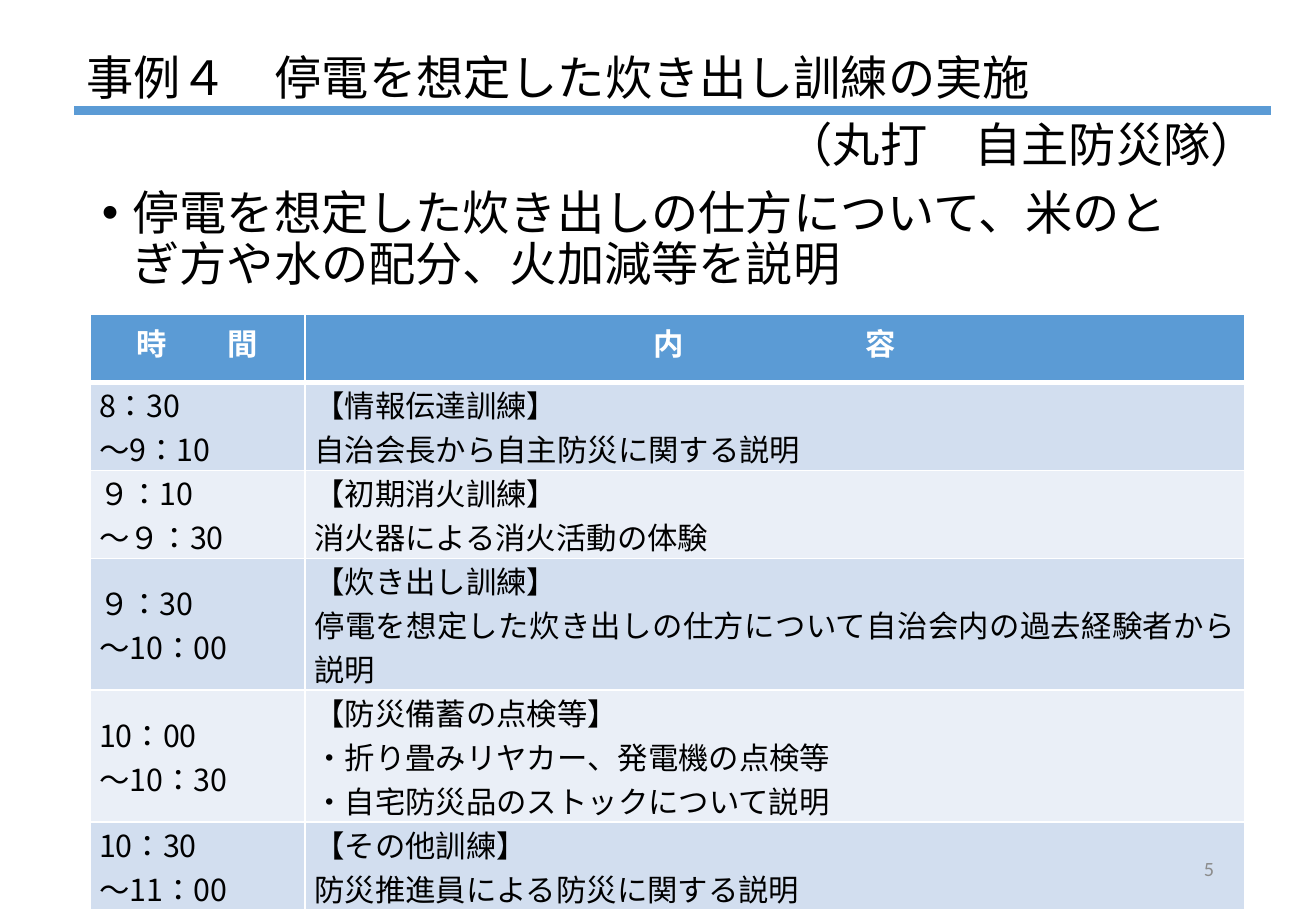
"""Build the slide on the cooking drill held under a simulated power cut."""
from lxml import etree
from pptx import Presentation
from pptx import util as u
from pptx.dml.color import RGBColor
from pptx.enum import shapes, text
from pptx.oxml import ns

COLOURS = {
    "accent": "5B9BD5",
    "band_dark": "D2DEEF",
    "band_light": "EAEFF7",
    "white": "FFFFFF",
    "black": "000000",
    "grey": "8C8C8C",
}
JAPANESE = "Noto Sans CJK JP"
ALIGN = text.PP_ALIGN
ANCHOR = text.MSO_ANCHOR

SCHEDULE = [
    (2, ["8：30", "～9：10"],
     ["【情報伝達訓練】", "自治会長から自主防災に関する説明"]),
    (2, ["９：10", "～９：30"],
     ["【初期消火訓練】", "消火器による消火活動の体験"]),
    (3, ["９：30", "～10：00"],
     ["【炊き出し訓練】",
      "停電を想定した炊き出しの仕方について自治会内の過去経験者から説明"]),
    (3, ["10：00", "～10：30"],
     ["【防災備蓄の点検等】", "・折り畳みリヤカー、発電機の点検等",
      "・自宅防災品のストックについて説明"]),
    (2, ["10：30", "～11：00"],
     ["【その他訓練】", "防災推進員による防災に関する説明"]),
]


def colour(name):
    """Return the named colour."""
    return RGBColor.from_string(COLOURS[name])


def write(frame, lines, size=28, font=JAPANESE, ink="black", bold=False,
          align=ALIGN.LEFT, spacing=None, before=0):
    """Write one paragraph per line and return the paragraphs."""
    for number, line in enumerate(lines):
        para = frame.add_paragraph() if number else frame.paragraphs[0]
        para.alignment = align
        para.space_before = u.Pt(before)
        if spacing:
            para.line_spacing = spacing
        span = para.add_run()
        span.text = line
        span.font.size = u.Pt(size)
        span.font.bold = bold
        span.font.color.rgb = colour(ink)
        span.font.name = font
        etree.SubElement(span.font._element, ns.qn("a:ea"), typeface=font)
    return frame.paragraphs


def add_text(page, box, line, anchor=ANCHOR.MIDDLE, **style):
    """Place a wrapped text box and return its paragraph."""
    frame = page.shapes.add_textbox(*map(u.Cm, box)).text_frame
    frame.word_wrap = True
    frame.vertical_anchor = anchor
    return write(frame, [line], **style)[0]


def add_heading(page, box):
    """Place the title, its rule and the group name beneath it."""
    left, top, width, height = box
    add_text(page, (left, top, width, height),
             "事例４　停電を想定した炊き出し訓練の実施", spacing=0.9)
    rule_top = u.Cm(top + 1.34)
    rule = page.shapes.add_connector(
        shapes.MSO_CONNECTOR.STRAIGHT,
        u.Cm(left), rule_top, u.Cm(left + 25.02), rule_top)
    rule.line.color.rgb = colour("accent")
    rule.line.width = u.Pt(5.75)
    etree.SubElement(rule._element.spPr, ns.qn("a:effectLst"))
    add_text(page, (left + 1.27, top + 1.39, width, height),
             "（丸打　自主防災隊）", align=ALIGN.RIGHT, spacing=0.9)


def add_summary(page, box):
    """Place the bulleted summary."""
    para = add_text(page, box,
                    "停電を想定した炊き出しの仕方について、米のとぎ方や水の配分、火加減等を説明",
                    anchor=ANCHOR.TOP, spacing=0.9, before=10)
    properties = para._p.get_or_add_pPr()
    indent = u.Cm(0.64)
    properties.set("marL", str(indent))
    properties.set("indent", str(-indent))
    etree.SubElement(properties, ns.qn("a:buFont"), typeface="Arial")
    etree.SubElement(properties, ns.qn("a:buChar"), char="•")


def paint_cell(cell, fill, top=1, bottom=1):
    """Give a cell white borders and a plain fill."""
    properties = cell._tc.get_or_add_tcPr()
    for side, width in (("L", 1), ("R", 1), ("T", top), ("B", bottom)):
        border = etree.SubElement(properties, ns.qn("a:ln" + side),
                                  w=str(u.Pt(width)))
        solid = etree.SubElement(border, ns.qn("a:solidFill"))
        etree.SubElement(solid, ns.qn("a:srgbClr"), val=COLOURS["white"])
    cell.fill.solid()
    cell.fill.fore_color.rgb = colour(fill)


def add_schedule(page, box):
    """Place the timetable, sharing its height out by lines of text."""
    left, top, width, height = box
    time_width, header_height = 4.5, 1.42
    line_height = (height - header_height) / sum(row[0] for row in SCHEDULE)
    table = page.shapes.add_table(len(SCHEDULE) + 1, 2,
                                  *map(u.Cm, box)).table
    table.columns[0].width = u.Cm(time_width)
    table.columns[1].width = u.Cm(width - time_width)
    table.rows[0].height = u.Cm(header_height)
    for column, heading in enumerate(["時　　間", "内　　　　　　容"]):
        cell = table.cell(0, column)
        paint_cell(cell, "accent", bottom=3)
        write(cell.text_frame, [heading], size=18, ink="white", bold=True,
              align=ALIGN.CENTER)
    for row, (line_count, *entry) in enumerate(SCHEDULE, 1):
        table.rows[row].height = u.Cm(line_count * line_height)
        for column, lines in enumerate(entry):
            cell = table.cell(row, column)
            paint_cell(cell, "band_dark" if row % 2 else "band_light",
                       top=3 if row == 1 else 1)
            cell.margin_left = cell.margin_right = u.Cm(0.19)
            cell.margin_top = cell.margin_bottom = 0
            cell.vertical_anchor = ANCHOR.TOP if column else ANCHOR.MIDDLE
            write(cell.text_frame, lines, size=18, align=ALIGN.JUSTIFY)


def add_page_number(page, box):
    """Place the page number."""
    add_text(page, box, "5", size=12, font="Calibri", ink="grey",
             align=ALIGN.RIGHT)


def main():
    """Build and save the deck."""
    deck = Presentation()
    deck.slide_width, deck.slide_height = u.Cm(27.51), u.Cm(19.05)
    page = deck.slides.add_slide(deck.slide_layouts[6])
    add_heading(page, (1.55, 0.97, 23.72, 1.42))
    add_summary(page, (1.88, 3.84, 23.72, 2.67))
    add_schedule(page, (1.88, 6.58, 24.13, 12.45))
    add_page_number(page, (19.43, 17.65, 6.2, 1.02))
    deck.save("out.pptx")


if __name__ == "__main__":
    main()
